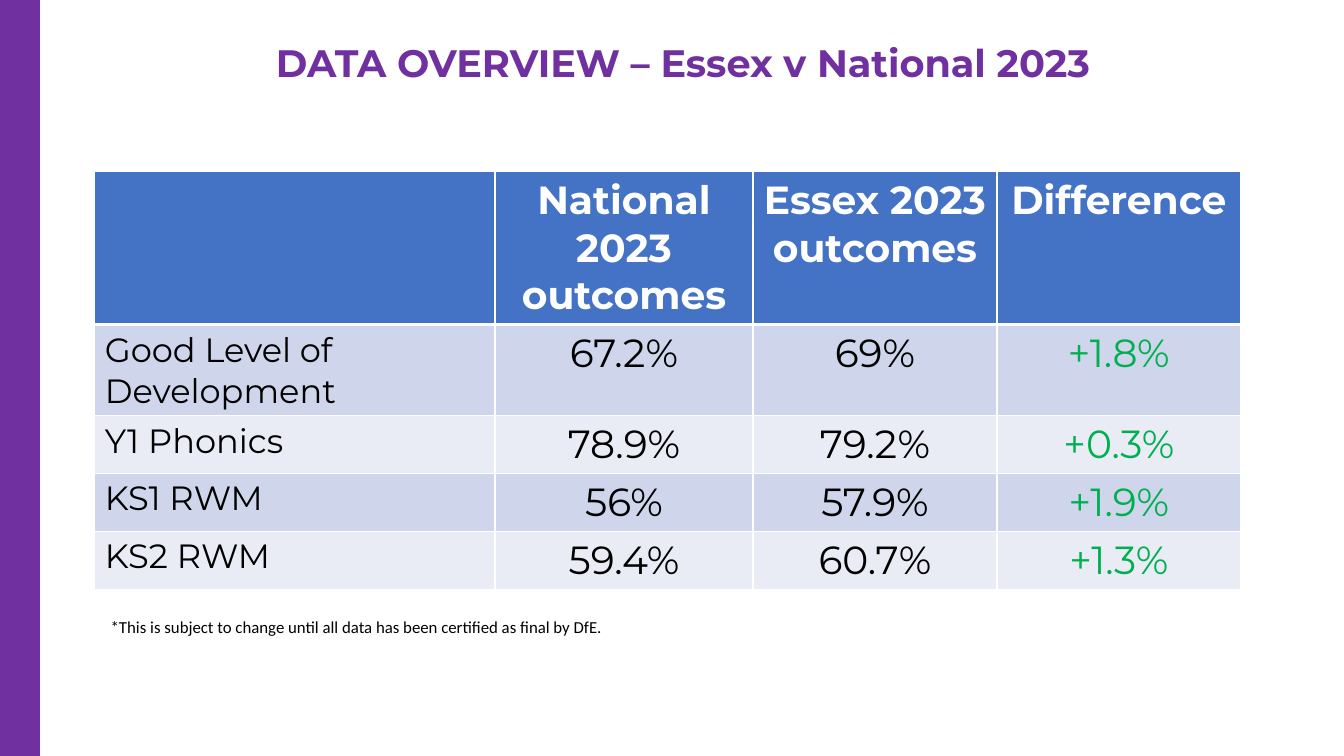
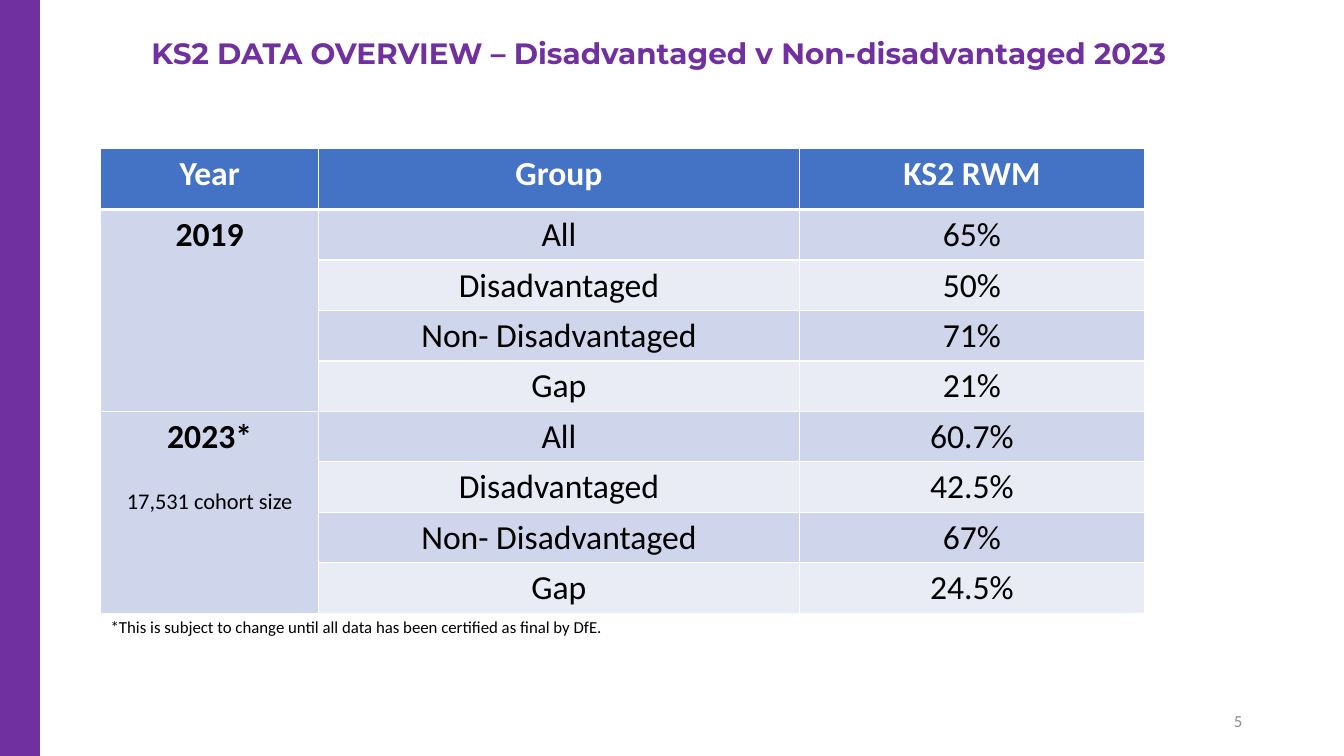
from dataclasses import dataclass

import pptx
import pptx.dml.color
import pptx.enum.shapes
import pptx.enum.text
import pptx.oxml
import pptx.oxml.ns
import pptx.presentation
import pptx.slide
import pptx.table
import pptx.text.text
import pptx.util

RGBColor = pptx.dml.color.RGBColor
Align = pptx.enum.text.PP_ALIGN
Anchor = pptx.enum.text.MSO_ANCHOR

PURPLE = RGBColor(0x70, 0x30, 0xA0)
BLUE = RGBColor(0x44, 0x72, 0xC4)
BAND_DARK = RGBColor(0xCF, 0xD5, 0xEA)
BAND_LIGHT = RGBColor(0xE9, 0xEB, 0xF5)
WHITE = RGBColor(0xFF, 0xFF, 0xFF)
BLACK = RGBColor(0, 0, 0)
GREEN = RGBColor(0, 0xB0, 0x50)
GREY = RGBColor(0x8C, 0x8C, 0x8C)

HEADING_FONT = "Montserrat"
BODY_FONT = "Calibri"
TITLE_ONLY_LAYOUT = 5
SLIDE_WIDTH = pptx.util.Inches(13.33)
SLIDE_HEIGHT = pptx.util.Inches(7.5)
CAVEAT = "*This is subject to change until all data has been certified as final by DfE."


def across(percent: float) -> pptx.util.Emu:
    """Length as a percentage of the slide's width."""
    return pptx.util.Emu(round(SLIDE_WIDTH * percent / 100))


def down(percent: float) -> pptx.util.Emu:
    """Length as a percentage of the slide's height."""
    return pptx.util.Emu(round(SLIDE_HEIGHT * percent / 100))


@dataclass(frozen=True)
class Area:
    """Place on the slide, in percent of its width and height."""

    left: float
    top: float
    width: float
    height: float

    def box(self) -> tuple[pptx.util.Emu, ...]:
        return across(self.left), down(self.top), across(self.width), down(self.height)


@dataclass(frozen=True)
class Style:
    font: str
    size: float
    color: RGBColor = BLACK
    bold: bool = False
    align: Align = Align.CENTER


@dataclass(frozen=True)
class Heading:
    text: str
    area: Area
    size: float
    line_spacing: float


@dataclass(frozen=True)
class Grid:
    """Table frame: origin, column widths and row heights in percent."""

    left: float
    top: float
    columns: tuple[float, ...]
    rows: tuple[float, ...]

    def area(self) -> Area:
        return Area(self.left, self.top, sum(self.columns), sum(self.rows))


@dataclass(frozen=True)
class YearGroup:
    year: str
    outcomes: tuple[str, ...]
    cohort: str = ""


NOTE_AREA = Area(7.5, 80.93, 75.54, 4)
NUMBER_AREA = Area(70.67, 92.67, 22.5, 5.33)
SIDE_BAND = Area(0, 0, 2.93, 100)
NOTE_STYLE = Style(BODY_FONT, 12, align=Align.LEFT)
NUMBER_STYLE = Style(BODY_FONT, 12, GREY, align=Align.RIGHT)

ESSEX_HEADING = Heading("DATA OVERVIEW – Essex v National 2023",
                        Area(17.85, 5.2, 65.94, 8.13), 27.3, 0.9)
ESSEX_GRID = Grid(7.05, 22.67, (29.78, 19.2, 18.15, 18.15), (20.27, 12, 7.67, 7.67, 7.67))
ESSEX_HEADER = ("", "National 2023 outcomes", "Essex 2023 outcomes", "Difference")
ESSEX_ROWS = (
    ("Good Level of Development", "67.2%", "69%", "+1.8%"),
    ("Y1 Phonics", "78.9%", "79.2%", "+0.3%"),
    ("KS1 RWM", "56%", "57.9%", "+1.9%"),
    ("KS2 RWM", "59.4%", "60.7%", "+1.3%"),
)
ESSEX_HEADER_STYLE = Style(HEADING_FONT, 28, WHITE, bold=True)
OUTCOME_STYLE = Style(HEADING_FONT, 28)
ESSEX_COLUMN_STYLES = (
    Style(HEADING_FONT, 24, align=Align.LEFT),
    OUTCOME_STYLE,
    OUTCOME_STYLE,
    Style(HEADING_FONT, 28, GREEN),
)

KS2_HEADING = Heading("KS2 DATA OVERVIEW – Disadvantaged v Non-disadvantaged 2023",
                      Area(10.2, 5.2, 77.64, 8.13), 21, 0.7)
KS2_GRID = Grid(7.5, 19.6, (16.2, 35.78, 25.66), (8.13,) + (6.67,) * 8)
KS2_HEADER = ("Year", "Group", "KS2 RWM")
PUPIL_GROUPS = ("All", "Disadvantaged", "Non- Disadvantaged", "Gap")
KS2_YEARS = (
    YearGroup("2019", ("65%", "50%", "71%", "21%")),
    YearGroup("2023*", ("60.7%", "42.5%", "67%", "24.5%"), "17,531 cohort size"),
)
KS2_HEADER_STYLE = Style(BODY_FONT, 24, WHITE, bold=True)
YEAR_STYLE = Style(BODY_FONT, 24, bold=True)
GROUP_STYLE = Style(BODY_FONT, 24)
COHORT_STYLE = Style(BODY_FONT, 16)


def write(paragraph: pptx.text.text._Paragraph, text: str, style: Style) -> None:
    paragraph.alignment = style.align
    run = paragraph.add_run()
    run.text = text
    run.font.name = style.font
    run.font.size = pptx.util.Pt(style.size)
    run.font.bold = style.bold
    run.font.color.rgb = style.color


def add_text(slide: pptx.slide.Slide, area: Area, text: str, style: Style,
             anchor: Anchor = Anchor.TOP) -> None:
    frame = slide.shapes.add_textbox(*area.box()).text_frame
    frame.word_wrap = True
    frame.vertical_anchor = anchor
    write(frame.paragraphs[0], text, style)


def add_titled_slide(deck: pptx.presentation.Presentation, heading: Heading) -> pptx.slide.Slide:
    """Add a slide with the side band, the title and the data caveat."""
    slide = deck.slides.add_slide(deck.slide_layouts[TITLE_ONLY_LAYOUT])
    band = slide.shapes.add_shape(pptx.enum.shapes.MSO_SHAPE.RECTANGLE, *SIDE_BAND.box())
    band.shadow.inherit = False
    band.fill.solid()
    band.fill.fore_color.rgb = PURPLE
    band.line.color.rgb = PURPLE
    band.line.width = pptx.util.Pt(1)

    title = slide.shapes.title
    title.left, title.top, title.width, title.height = heading.area.box()
    frame = title.text_frame
    frame.auto_size = pptx.enum.text.MSO_AUTO_SIZE.NONE
    frame.word_wrap = True
    frame.vertical_anchor = Anchor.TOP
    frame.paragraphs[0].line_spacing = heading.line_spacing
    write(frame.paragraphs[0], heading.text,
          Style(HEADING_FONT, heading.size, PURPLE, bold=True))

    add_text(slide, NOTE_AREA, CAVEAT, NOTE_STYLE)
    return slide


def paint_cell(cell: pptx.table._Cell, fill: RGBColor, top: float, bottom: float) -> None:
    """Give a cell white borders (widths in points) and a solid fill."""
    properties = cell._tc.get_or_add_tcPr()
    for side, width in (("L", 1), ("R", 1), ("T", top), ("B", bottom)):
        properties.append(pptx.oxml.parse_xml(
            f'<a:ln{side} {pptx.oxml.ns.nsdecls("a")} w="{pptx.util.Pt(width)}">'
            f'<a:solidFill><a:srgbClr val="{WHITE}"/></a:solidFill></a:ln{side}>'))
    cell.fill.solid()
    cell.fill.fore_color.rgb = fill


def add_banded_table(slide: pptx.slide.Slide, grid: Grid, header: tuple[str, ...],
                     header_style: Style) -> pptx.table.Table:
    """Add a table with a blue header over rows of alternating fill."""
    table = slide.shapes.add_table(
        len(grid.rows), len(grid.columns), *grid.area().box()).table
    for column, width in zip(table.columns, grid.columns):
        column.width = across(width)
    for index, (row, height) in enumerate(zip(table.rows, grid.rows)):
        row.height = down(height)
        fill = BLUE if index == 0 else BAND_DARK if index % 2 else BAND_LIGHT
        for cell in row.cells:
            paint_cell(cell, fill, 3 if index == 1 else 1, 3 if index == 0 else 1)
    for cell, label in zip(table.rows[0].cells, header):
        if label:
            write(cell.text_frame.paragraphs[0], label, header_style)
    return table


def build_essex_slide(deck: pptx.presentation.Presentation) -> None:
    slide = add_titled_slide(deck, ESSEX_HEADING)
    table = add_banded_table(slide, ESSEX_GRID, ESSEX_HEADER, ESSEX_HEADER_STYLE)
    for row, values in enumerate(ESSEX_ROWS, start=1):
        for column, (value, style) in enumerate(zip(values, ESSEX_COLUMN_STYLES)):
            write(table.cell(row, column).text_frame.paragraphs[0], value, style)


def build_ks2_slide(deck: pptx.presentation.Presentation) -> None:
    slide = add_titled_slide(deck, KS2_HEADING)
    table = add_banded_table(slide, KS2_GRID, KS2_HEADER, KS2_HEADER_STYLE)
    span = len(PUPIL_GROUPS)
    for position, group in enumerate(KS2_YEARS):
        first = 1 + position * span
        year_cell = table.cell(first, 0)
        year_cell.merge(table.cell(first + span - 1, 0))
        write(year_cell.text_frame.paragraphs[0], group.year, YEAR_STYLE)
        if group.cohort:
            cohort = year_cell.text_frame.add_paragraph()
            cohort.space_before = pptx.util.Pt(22)
            write(cohort, group.cohort, COHORT_STYLE)
        for row, values in enumerate(zip(PUPIL_GROUPS, group.outcomes), start=first):
            for column, value in enumerate(values, start=1):
                write(table.cell(row, column).text_frame.paragraphs[0], value, GROUP_STYLE)
    add_text(slide, NUMBER_AREA, "5", NUMBER_STYLE, Anchor.MIDDLE)


def main() -> None:
    deck = pptx.Presentation()
    deck.slide_width = SLIDE_WIDTH
    deck.slide_height = SLIDE_HEIGHT
    build_essex_slide(deck)
    build_ks2_slide(deck)
    deck.save("out.pptx")


if __name__ == "__main__":
    main()
